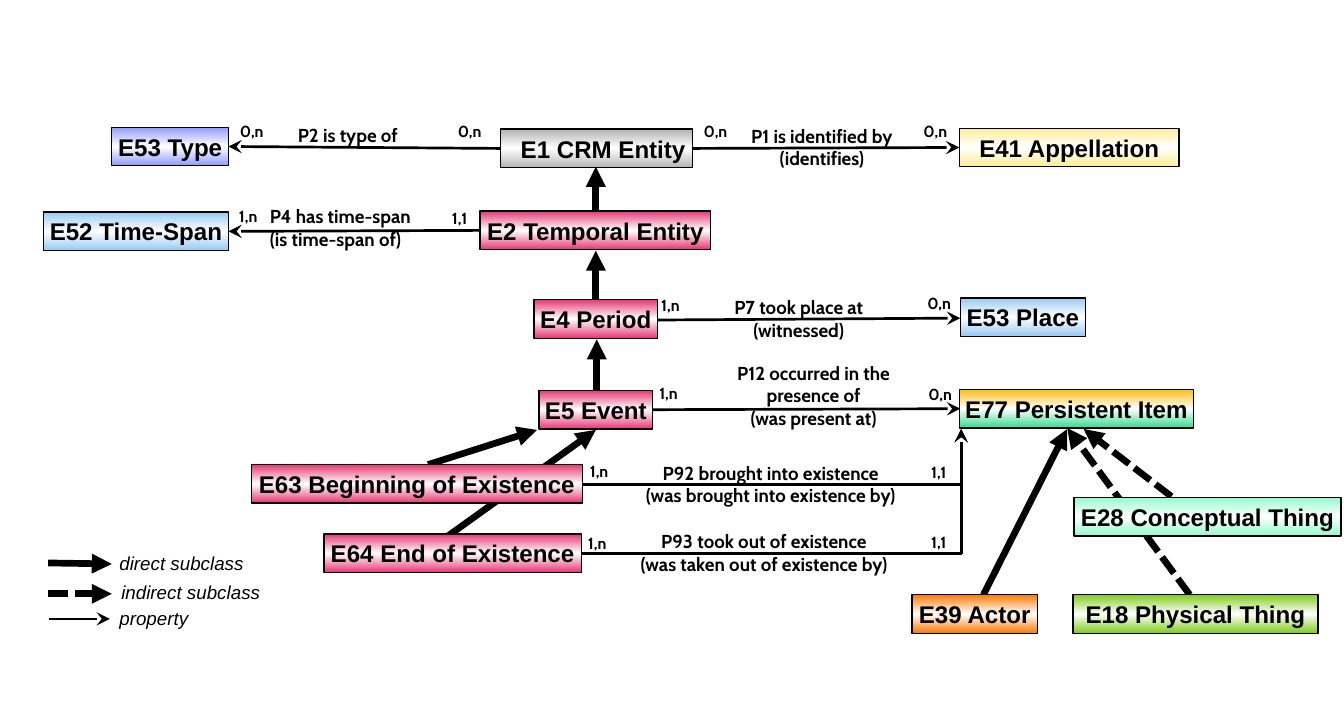
"""Draw the CIDOC CRM event hierarchy with its subclass and property arrows."""
from copy import deepcopy

from pptx import Presentation
from pptx import util as u
from pptx.dml.color import RGBColor
from pptx.enum import dml, shapes, text
from pptx.oxml.ns import qn
from pptx.oxml.xmlchemy import OxmlElement

BLACK = RGBColor(0x00, 0x00, 0x00)
WHITE = RGBColor(0xFF, 0xFF, 0xFF)
ROSE = RGBColor(0xE5, 0x37, 0x75)
SKY = RGBColor(0x97, 0xC9, 0xF3)
VIOLET = RGBColor(0x8F, 0x9C, 0xFB)
GREY = RGBColor(0xB3, 0xB3, 0xB3)
CREAM = RGBColor(0xFF, 0xEE, 0x97)
AMBER = RGBColor(0xFF, 0xBB, 0x11)
EMERALD = RGBColor(0x35, 0xDB, 0x90)
MINT = RGBColor(0x93, 0xFB, 0xCC)
LIME = RGBColor(0x81, 0xCC, 0x1E)
ORANGE = RGBColor(0xFC, 0x7A, 0x04)

LEFT, CENTER = text.PP_ALIGN.LEFT, text.PP_ALIGN.CENTER
STRAIGHT, ELBOW = shapes.MSO_CONNECTOR.STRAIGHT, shapes.MSO_CONNECTOR.ELBOW

DIRECT = [
    (444, 482, 557, 446), (459, 560, 618, 446), (1020, 617, 1107, 445),
    (618, 240, 618, 173), (618, 311, 618, 260), (619, 405, 619, 352),
    (50, 584, 116, 585),
]
INDIRECT = [
    (1234, 617, 1107, 444), (1215, 515, 1124, 445), (50, 616, 116, 616),
]
PROPERTIES = [
    (519, 154, 237, 152), (717, 154, 995, 153), (498, 239, 237, 240),
    (682, 332, 996, 330), (677, 425, 996, 424), (51, 642, 114, 642),
]
BENT_PROPERTIES = [(604, 503, 997, 445), (603, 574, 997, 445)]

ENTITIES = [
    ("E53 Type", 116, 132, 121, VIOLET, VIOLET),
    ("E41 Appellation", 995, 133, 228, CREAM, CREAM),
    ("E52 Time-Span", 45, 220, 192, SKY, SKY),
    ("E2 Temporal Entity", 498, 219, 239, ROSE, ROSE),
    ("E4 Period", 554, 311, 128, ROSE, ROSE),
    ("E53 Place", 996, 309, 130, SKY, SKY),
    ("E5 Event", 559, 405, 118, ROSE, ROSE),
    ("E77 Persistent Item", 995, 404, 243, AMBER, EMERALD),
    ("E63 Beginning of Existence", 261, 482, 343, ROSE, ROSE),
    ("E64 End of Existence", 336, 554, 267, ROSE, ROSE),
    ("E28 Conceptual Thing", 1114, 516, 277, MINT, MINT),
    ("E39 Actor", 946, 617, 130, ORANGE, ORANGE),
    ("E18 Physical Thing", 1113, 617, 254, LIME, LIME),
]

PROPERTY_NAMES = [
    (["P2 is type of"], 299, 123, 159, LEFT),
    (["P1 is identified by", "(identifies)"], 754, 124, 197, CENTER),
    (["P4 has time-span", "(is time-span of)"], 270, 208, 245, LEFT),
    (["P7 took place at", "(witnessed)"], 748, 302, 161, CENTER),
    (["P12 occurred in the presence of", "(was present at)"], 736, 370, 216, CENTER),
    (["P92 brought into existence", "(was brought into existence by)"],
     624, 474, 351, CENTER),
    (["P93 took out of existence", "(was taken out of existence by)"],
     624, 545, 337, CENTER),
]

CARDINALITIES = {
    "0,n": [(239, 121), (465, 121), (720, 121), (948, 121), (952, 299), (953, 394)],
    "1,n": [(238, 209), (676, 302), (674, 393), (602, 474), (600, 548)],
    "1,1": [(459, 211), (956, 475), (956, 547)],
}

LEGEND = [
    ("direct subclass", 114, 567),
    ("indirect subclass", 116, 598),
    ("property", 114, 625),
]


class Diagram:
    """Hold the fonts, the scale and the current page."""

    scale = 9144
    entity_font = "Arial"
    property_font = "Cabin"
    entity_height = 40

    def __init__(self, deck):
        deck.slide_width, deck.slide_height = self.emu(1394, 750)
        self.page = deck.slides.add_slide(deck.slide_layouts[6])

    def emu(self, *lengths):
        return [u.Emu(length * self.scale) for length in lengths]

    def set_text(self, frame, lines, size, font, align, bold=True, italic=False):
        frame.text = "\n".join(lines)
        for para in frame.paragraphs:
            para.alignment = align
            para.font.name = font
            para.font.size = u.Pt(size)
            para.font.bold = bold
            para.font.italic = italic
            para.font.color.rgb = BLACK

    def entity(self, name, left, top, width, upper, lower, indent=6):
        box = self.page.shapes.add_shape(
            shapes.MSO_SHAPE.RECTANGLE,
            *self.emu(left, top, width, self.entity_height))
        box.shadow.inherit = False
        box.line.color.rgb = BLACK
        box.line.width = u.Pt(1)
        box.fill.gradient()
        box.fill.gradient_angle = 270
        stop_list = box.element.spPr.find(qn("a:gradFill")).find(qn("a:gsLst"))
        stop_list.append(deepcopy(stop_list[0]))
        colors = (upper, WHITE, lower)
        for stop, position, color in zip(box.fill.gradient_stops, (0, 0.5, 1), colors):
            stop.position = position
            stop.color.rgb = color
        frame = box.text_frame
        frame.word_wrap = False
        frame.vertical_anchor = text.MSO_ANCHOR.MIDDLE
        frame.margin_left, frame.margin_right = self.emu(indent, 6)
        self.set_text(frame, [name], 18, self.entity_font, CENTER)

    def label(self, lines, left, top, width, size, font, align=LEFT, **style):
        height = 10 + 24 * len(lines)
        box = self.page.shapes.add_textbox(*self.emu(left, top, width, height))
        box.text_frame.word_wrap = True
        self.set_text(box.text_frame, lines, size, font, align, **style)

    def arrow(self, ends, weight, head, head_size, kind=STRAIGHT, dashed=False):
        line = self.page.shapes.add_connector(kind, *self.emu(*ends))
        line.line.color.rgb = BLACK
        line.line.width = u.Pt(weight)
        if dashed:
            line.line.dash_style = dml.MSO_LINE.SQUARE_DOT
        properties = line.element.spPr
        if kind == ELBOW:
            properties.find(qn("a:prstGeom")).set("prst", "bentConnector2")
        tip = OxmlElement("a:tailEnd")
        for key, value in (("type", head), ("w", head_size), ("len", head_size)):
            tip.set(key, value)
        properties.find(qn("a:ln")).append(tip)
        properties.append(OxmlElement("a:effectLst"))

    def subclass(self, ends, dashed=False):
        self.arrow(ends, 5, "triangle", "med", dashed=dashed)

    def property(self, ends, kind=STRAIGHT):
        self.arrow(ends, 2, "stealth", "lg", kind)


def main():
    deck = Presentation()
    diagram = Diagram(deck)
    for ends in INDIRECT:
        diagram.subclass(ends, dashed=True)
    for ends in DIRECT:
        diagram.subclass(ends)
    for ends in PROPERTIES:
        diagram.property(ends)
    for ends in BENT_PROPERTIES:
        diagram.property(ends, ELBOW)
    diagram.entity("E1 CRM Entity", 519, 134, 199, GREY, GREY, indent=20)
    for entity in ENTITIES:
        diagram.entity(*entity)
    for lines, left, top, width, align in PROPERTY_NAMES:
        diagram.label(lines, left, top, width, 14, diagram.property_font, align)
    for cardinality, places in CARDINALITIES.items():
        for left, top in places:
            diagram.label([cardinality], left, top, 54, 12, diagram.property_font)
    for name, left, top in LEGEND:
        diagram.label([name], left, top, 180, 14, diagram.entity_font,
                      bold=False, italic=True)
    deck.save("out.pptx")


if __name__ == "__main__":
    main()
